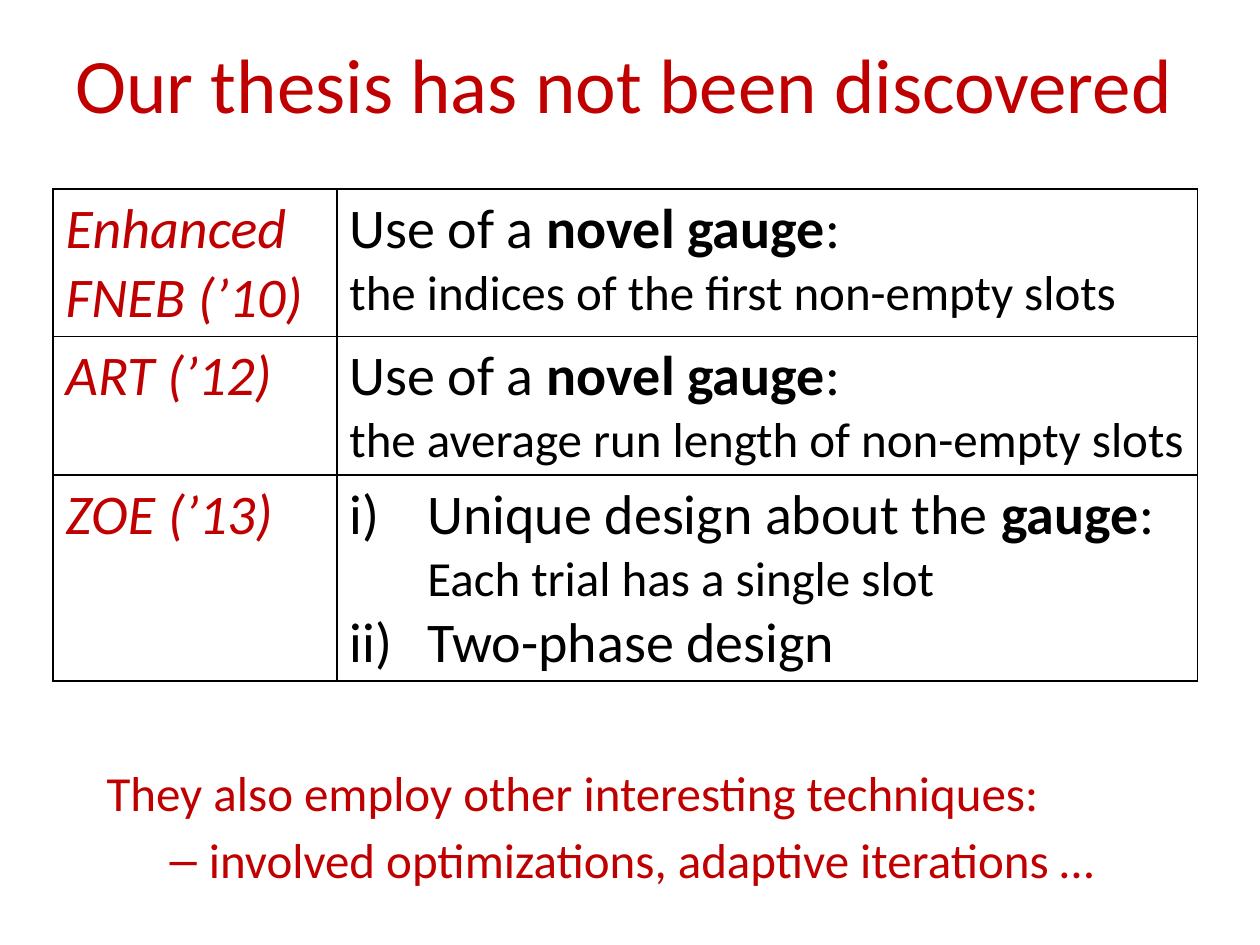
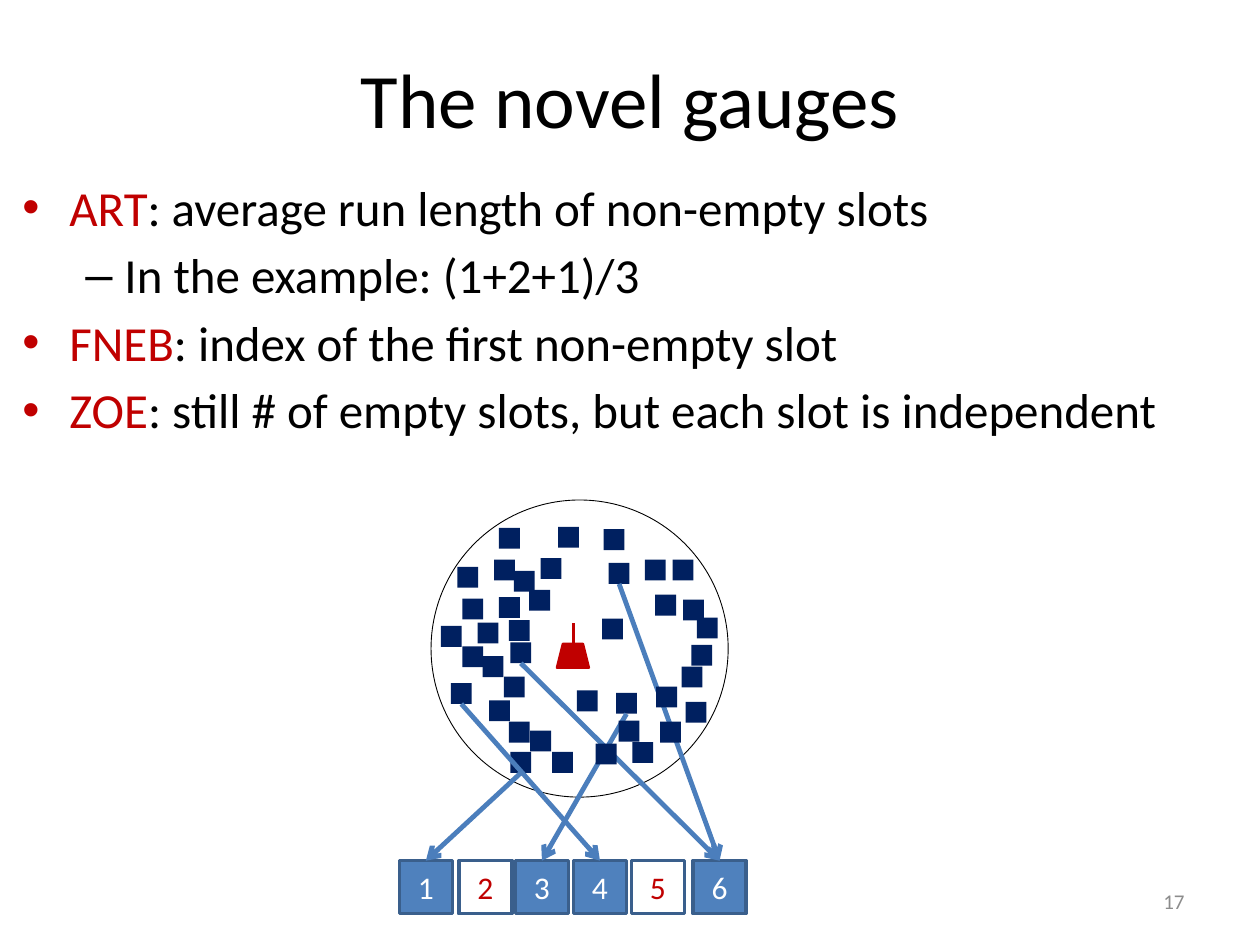
from lxml import etree
from pptx import Presentation, util as u
from pptx.dml.color import RGBColor
from pptx.enum import shapes, text
from pptx.oxml import ns

BLACK = RGBColor(0x00, 0x00, 0x00)
WHITE = RGBColor(0xFF, 0xFF, 0xFF)
RED = RGBColor(0xC0, 0x00, 0x00)
NAVY = RGBColor(0x00, 0x20, 0x60)
BLUE = RGBColor(0x4F, 0x81, 0xBD)
EDGE = RGBColor(0x3A, 0x5F, 0x8C)
ARROW = RGBColor(0x4B, 0x7E, 0xBC)
GRAY = RGBColor(0x8C, 0x8C, 0x8C)
FONT = "Calibri"
CENTER = text.PP_ALIGN.CENTER
MIDDLE = text.MSO_ANCHOR.MIDDLE
SHAPE = shapes.MSO_SHAPE

# Left margin and hanging indent in cm, then the bullet element
BULLETS = {
    "•": (0.95, 0.95, "buChar", {"char": "•"}),
    "–": (2.06, 0.79, "buChar", {"char": "–"}),
    "i)": (1.57, 1.57, "buAutoNum", {"type": "romanLcParenR"}),
}


def write(p, content, size=28, color=BLACK, bold=False, italic=False,
          align=None, bullet=None, before=None):
    """Append formatted text to paragraph p; a newline becomes a line break."""
    for i, line in enumerate(content.split("\n")):
        if i:
            p.add_line_break()
        if line:
            r = p.add_run()
            r.text = line
            r.font.name, r.font.size = FONT, u.Pt(size)
            r.font.bold, r.font.italic = bold, italic
            r.font.color.rgb = color
    if align is not None:
        p.alignment = align
    if before is not None:
        p.space_before = u.Pt(before)
    if bullet:
        left, hang, tag, attrs = BULLETS[bullet]
        p.level = 1 if bullet == "–" else 0
        pPr = p._p.get_or_add_pPr()
        pPr.set("marL", str(u.Cm(left)))
        pPr.set("indent", str(-u.Cm(hang)))
        if tag == "buChar":
            etree.SubElement(pPr, ns.qn("a:buFont"), typeface="Arial")
        etree.SubElement(pPr, ns.qn("a:" + tag), attrs)


def place(s, x, y, w, h, kind=None, fill=None, line=None, width=1, anchor=None):
    """Add a preset shape, or a text box if no kind is given."""
    box = [u.Cm(v) for v in (x, y, w, h)]
    if kind is None:
        sp = s.shapes.add_textbox(*box)
    else:
        sp = s.shapes.add_shape(kind, *box)
        sp.shadow.inherit = False
        if fill is None:
            sp.fill.background()
        else:
            sp.fill.solid()
            sp.fill.fore_color.rgb = fill
        if line is None:
            sp.line.fill.background()
        else:
            sp.line.color.rgb = line
            sp.line.width = u.Pt(width)
    sp.text_frame.word_wrap = True
    if anchor is not None:
        sp.text_frame.vertical_anchor = anchor
    return sp


prs = Presentation()
prs.slide_width, prs.slide_height = u.Cm(25.4), u.Cm(19.05)

# Titles and bulleted text of both slides
pages = [
    dict(title="Our thesis has not been discovered", title_color=RED,
         title_box=(0.2, 0.08, 24.77, 3.18), body_box=(1.9, 15.24, 21.39, 2.9),
         body=[(None, "They also employ other interesting techniques:", ""),
               ("–", "involved optimizations, adaptive iterations …", "")]),
    dict(title="The novel gauges", title_color=BLACK,
         title_box=(0, 0, 25.4, 3.94), body_box=(0.2, 3.45, 25.2, 14.33),
         body=[("•", "ART", ": average run length of non-empty slots"),
               ("–", "", "In the example: (1+2+1)/3"),
               ("•", "FNEB", ": index of the first non-empty slot"),
               ("•", "ZOE", ": still # of empty slots, but each slot is independent")]),
]
for page in pages:
    s = prs.slides.add_slide(prs.slide_layouts[6])
    sp = place(s, *page["title_box"], anchor=MIDDLE)
    write(sp.text_frame.paragraphs[0], page["title"], size=44,
          color=page["title_color"], align=CENTER)
    tf = place(s, *page["body_box"]).text_frame
    for i, (bullet, term, rest) in enumerate(page["body"]):
        p = tf.add_paragraph() if i else tf.paragraphs[0]
        write(p, term, color=RED)
        write(p, rest, bullet=bullet, before=5)

# Slide 1: table of protocols and their gauges
s = prs.slides[0]
protocols = [
    ("Enhanced \nFNEB (’10)", 2.97,
     [(None, "Use of a ", "novel gauge", "the indices of the first non-empty slots")]),
    ("ART (’12)", 2.79,
     [(None, "Use of a ", "novel gauge", "the average run length of non-empty slots")]),
    ("ZOE (’13)", 4.14,
     [("i)", "Unique design about the ", "gauge", "Each trial has a single slot"),
      ("i)", "Two-phase design", "", "")]),
]
tbl = s.shapes.add_table(3, 2, u.Cm(1.07), u.Cm(3.81), u.Cm(23.07), u.Cm(9.9)).table
tbl.first_row = tbl.horz_banding = False
tbl.columns[0].width, tbl.columns[1].width = u.Cm(5.72), u.Cm(17.35)
for row, (name, height, points) in zip(tbl.rows, protocols):
    row.height = u.Cm(height)
    label, detail = row.cells
    write(label.text_frame.paragraphs[0], name, size=32, color=RED, italic=True)
    tf = detail.text_frame
    for i, (bullet, lead, strong, note) in enumerate(points):
        p = tf.add_paragraph() if i else tf.paragraphs[0]
        write(p, lead, size=32, bullet=bullet)
        if strong:
            write(p, strong, size=32, bold=True)
            write(p, ": \n", size=32)
            write(p, note)
    for cell in row.cells:
        tcPr = cell._tc.get_or_add_tcPr()
        for side in ("lnL", "lnR", "lnT", "lnB"):
            ln = etree.SubElement(tcPr, ns.qn("a:" + side), w=str(u.Pt(1)))
            solid = etree.SubElement(ln, ns.qn("a:solidFill"))
            etree.SubElement(solid, ns.qn("a:srgbClr"), val=str(BLACK))
        cell.fill.background()

# Slide 2: reader among tags, with replies landing in numbered slots
s = prs.slides[1]
sp = place(s, 18.21, 17.65, 5.92, 1.02, anchor=MIDDLE)
write(sp.text_frame.paragraphs[0], "17", size=12, color=GRAY,
      align=text.PP_ALIGN.RIGHT)

TAG, SLOT, SLOT_TOP = 0.42, 1.07, 17.35
slot_lefts = [8.05, 9.25, 10.39, 11.56, 12.73, 13.97]
empty_slots = (2, 5)
replies = [(10.29, 15.16, 1), (12.42, 13.97, 3), (12.27, 11.35, 6),
           (10.29, 12.95, 6), (9.09, 13.77, 4)]
silent_tags = [
    (9.96, 11.28), (11.63, 13.92), (14.05, 12.45), (9.86, 14.12), (8.89, 12.62),
    (11.25, 10.62), (12.75, 14.96), (9.22, 11.43), (10.67, 11.89), (10.06, 10.64),
    (13.56, 11.28), (13.82, 14.15), (13.74, 13.44), (10.26, 14.55), (9.32, 13.03),
    (12.17, 10.67), (13.77, 12.09), (12.47, 14.53), (13.94, 13.0), (10.69, 14.73),
    (9.73, 13.23), (13.31, 14.55), (10.06, 12.04), (12.14, 12.47), (10.9, 11.25),
    (13.21, 11.99), (12.01, 14.99), (13.23, 13.84), (11.13, 15.16), (10.16, 13.64),
    (13.0, 11.28), (10.26, 12.5), (10.36, 11.51), (9.63, 12.55), (9.32, 12.07),
]

place(s, 8.69, 10.08, 5.99, 5.99, SHAPE.OVAL, line=BLACK, width=0.5)
for x, y, _ in replies:
    place(s, x, y, TAG, TAG, SHAPE.RECTANGLE, fill=NAVY)
place(s, 11.23, 12.98, 0.64, 0.48, SHAPE.TRAPEZOID, fill=RED, line=RED, width=1.5)

for number, x in enumerate(slot_lefts, 1):
    empty = number in empty_slots
    sp = place(s, x, SLOT_TOP, SLOT, SLOT, SHAPE.RECTANGLE, line=EDGE, width=2,
               fill=None if empty else BLUE, anchor=MIDDLE)
    write(sp.text_frame.paragraphs[0], str(number), size=18,
          color=RED if empty else WHITE, align=CENTER)

lines = [(11.56, 12.98, 11.56, 12.55, RED, 1.5, False)]
for x, y, number in replies:
    lines.append((x + TAG / 2, y + TAG, slot_lefts[number - 1] + SLOT / 2, SLOT_TOP,
                  ARROW, 2.75, True))
for x1, y1, x2, y2, color, width, has_arrow in lines:
    c = s.shapes.add_connector(shapes.MSO_CONNECTOR.STRAIGHT,
                               u.Cm(x1), u.Cm(y1), u.Cm(x2), u.Cm(y2))
    c.line.color.rgb = color
    c.line.width = u.Pt(width)
    if has_arrow:
        etree.SubElement(c.line._get_or_add_ln(), ns.qn("a:tailEnd"), type="arrow")
    etree.SubElement(c._element.spPr, ns.qn("a:effectLst"))

for x, y in silent_tags:
    place(s, x, y, TAG, TAG, SHAPE.RECTANGLE, fill=NAVY)

prs.save("out.pptx")
